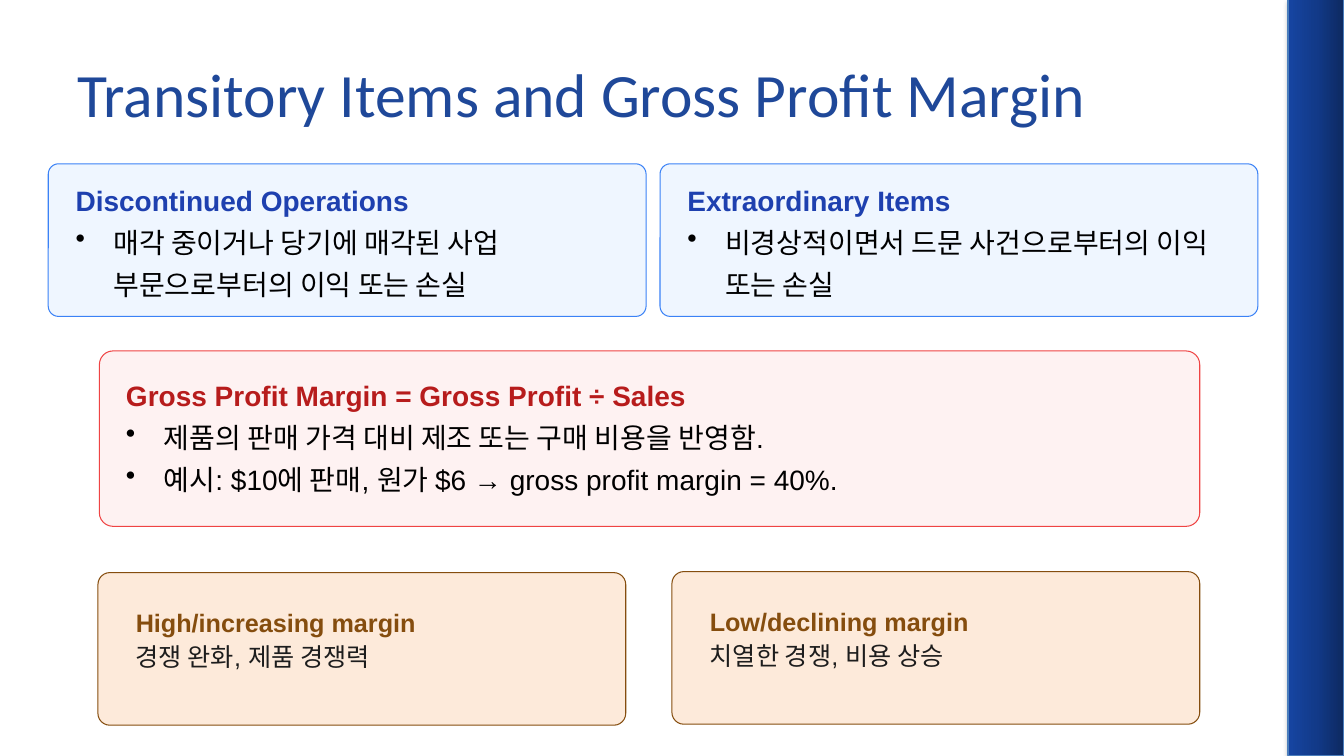
from copy import deepcopy
from lxml import etree
from pptx import Presentation
from pptx import util as u
from pptx.dml.color import RGBColor
from pptx.enum import shapes, text
from pptx.oxml import ns

# Content: each card is a heading followed by its lines
TITLE = "Transitory Items and Gross Profit Margin"
ITEMS = [
    ("Discontinued Operations",
     ["매각 중이거나 당기에 매각된 사업 부문으로부터의 이익 또는 손실"]),
    ("Extraordinary Items",
     ["비경상적이면서 드문 사건으로부터의 이익 또는 손실"]),
]
FORMULA = ("Gross Profit Margin = Gross Profit ÷ Sales",
           ["제품의 판매 가격 대비 제조 또는 구매 비용을 반영함.",
            "예시: $10에 판매, 원가 $6 → gross profit margin = 40%."])
MARGINS = [
    ("High/increasing margin", ["경쟁 완화, 제품 경쟁력"]),
    ("Low/declining margin", ["치열한 경쟁, 비용 상승"]),
]

THEME = {
    "title": {"font": "Calibri", "size": 44, "color": "1F4899"},
    "font": "Arial",
    "band": {"stops": ["0D2960", "123A89", "1645A2"], "line": "4B7EBC"},
    "blue": {"fill": "EFF6FF", "line": "3B82F6", "head": "1E40AF",
             "body": "000000", "size": 20, "corner": 0.067},
    "red": {"fill": "FEF2F2", "line": "EF4444", "head": "B71C1C",
            "body": "000000", "size": 20, "corner": 0.078},
    "tan": {"fill": "FDEADA", "line": "854D0E", "head": "854D0E",
            "body": "1D1D1D", "size": 18, "corner": 0.078},
}
WIDTH, HEIGHT = 960, 540
BAND_W = 40
INDENT = 27


def rgb(value):
    return RGBColor.from_string(value)


def add_run(p, words, font, size, color, bold=False):
    r = p.add_run()
    r.text = words
    r.font.name, r.font.size, r.font.bold = font, u.Pt(size), bold
    r.font.color.rgb = rgb(color)


def add_bullet(p):
    pPr = p._p.get_or_add_pPr()
    pPr.set("marL", str(u.Pt(INDENT)))
    pPr.set("indent", str(-u.Pt(INDENT)))
    etree.SubElement(pPr, ns.qn("a:buChar")).set("char", "•")


def add_card(s, look, box, text_box, card, head_pitch, pitch,
             bullets=True, gap=0):
    """A rounded panel with its heading and lines on top."""
    sp = s.shapes.add_shape(shapes.MSO_SHAPE.ROUNDED_RECTANGLE, *map(u.Pt, box))
    sp.adjustments[0] = look["corner"]
    sp.shadow.inherit = False
    sp.fill.solid()
    sp.fill.fore_color.rgb = rgb(look["fill"])
    sp.line.color.rgb = rgb(look["line"])
    sp.line.width = u.Pt(0.75)

    tf = s.shapes.add_textbox(*map(u.Pt, text_box)).text_frame
    tf.word_wrap = True
    tf.margin_left = tf.margin_right = tf.margin_top = tf.margin_bottom = 0
    heading, lines = card
    p = tf.paragraphs[0]
    if head_pitch:
        p.line_spacing = u.Pt(head_pitch)
    p.space_after = u.Pt(gap)
    add_run(p, heading, THEME["font"], look["size"], look["head"], True)
    for line in lines:
        p = tf.add_paragraph()
        if bullets:
            add_bullet(p)
        p.line_spacing = u.Pt(pitch)
        add_run(p, line, THEME["font"], look["size"], look["body"])


def add_band(s):
    """Gradient strip with a soft shadow along the right edge."""
    look = THEME["band"]
    sp = s.shapes.add_shape(shapes.MSO_SHAPE.RECTANGLE, u.Pt(WIDTH - BAND_W),
                            0, u.Pt(BAND_W), u.Pt(HEIGHT))
    sp.fill.gradient()
    sp.fill.gradient_angle = 180
    stops = sp._element.spPr.find(".//" + ns.qn("a:gsLst"))
    stops.insert(1, deepcopy(stops[0]))
    for i, (stop, color) in enumerate(zip(sp.fill.gradient_stops, look["stops"])):
        stop.position = i / 2
        stop.color.rgb = rgb(color)
    sp.line.color.rgb = rgb(look["line"])
    sp.line.width = u.Pt(0.75)
    sp.shadow.inherit = False
    effects = sp._element.spPr.find(ns.qn("a:effectLst"))
    shadow = etree.SubElement(effects, ns.qn("a:outerShdw"), blurRad="40000",
                              dist="23000", dir="5400000", rotWithShape="0")
    color = etree.SubElement(shadow, ns.qn("a:srgbClr"), val="000000")
    etree.SubElement(color, ns.qn("a:alpha"), val="35000")


def main():
    prs = Presentation()
    prs.slide_width, prs.slide_height = u.Pt(WIDTH), u.Pt(HEIGHT)
    s = prs.slides.add_slide(prs.slide_layouts[5])
    add_band(s)

    # Title
    title = s.shapes.title
    title.left, title.top, title.width, title.height = map(u.Pt, (48, 21.6, 864, 90))
    tf = title.text_frame
    tf.vertical_anchor = text.MSO_ANCHOR.MIDDLE
    p = tf.paragraphs[0]
    p.alignment = text.PP_ALIGN.LEFT
    add_run(p, TITLE, **THEME["title"])

    # Transitory items, side by side
    for i, card in enumerate(ITEMS):
        x = 34.5 + i * 437
        add_card(s, THEME["blue"], (x, 117, 427, 109),
                 (x + 19.5, 131, 410, 80), card, None, 30)

    # Gross profit margin formula
    add_card(s, THEME["red"], (71, 250.7, 786, 125.3),
             (90, 264.2, 755, 112), FORMULA, 30, 30)

    # Margin directions, side by side
    for i, card in enumerate(MARGINS):
        x = 70 + i * 410
        y = 409 - i * 0.7
        add_card(s, THEME["tan"], (x, y, 377, 109),
                 (x + 27, y + 30.5, 310, 66), card, 16, 16, False, 8)

    prs.save("out.pptx")


if __name__ == "__main__":
    main()
